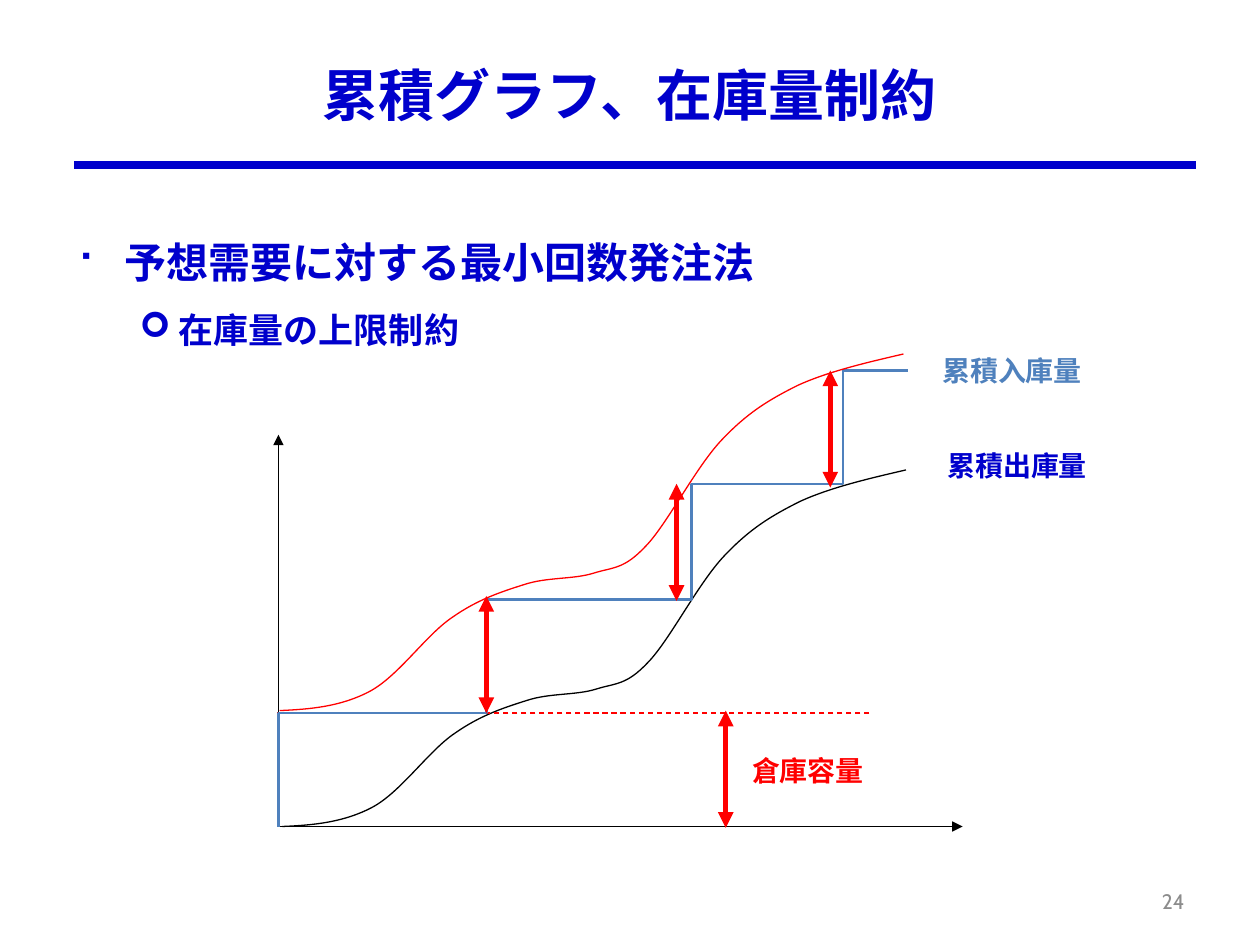
from dataclasses import dataclass

from lxml import etree
from pptx import Presentation
from pptx.dml.color import RGBColor
from pptx.enum.dml import MSO_LINE
from pptx.enum.shapes import MSO_CONNECTOR
from pptx.enum.text import MSO_ANCHOR, PP_ALIGN
from pptx.oxml.ns import qn
from pptx.util import Inches, Pt

STRAIGHT = MSO_CONNECTOR.STRAIGHT
DASH = MSO_LINE.DASH
TOP, MIDDLE = MSO_ANCHOR.TOP, MSO_ANCHOR.MIDDLE
LEFT, CENTER, RIGHT = PP_ALIGN.LEFT, PP_ALIGN.CENTER, PP_ALIGN.RIGHT

NAVY, BLUE, RED, BLACK, GRAY = "0000CC", "4F81BD", "FF0000", "000000", "8C8C8C"
TITLE_FONT, LABEL_FONT, CAPACITY_FONT = "Cabin", "Noto Sans CJK JP", "Arial"
BULLET_FONT = "Wingdings"

# Chart frame in inches: origin, axis ends and the corners of the orders
X0, Y0 = 2.21, 6.56
X_END, Y_END = 7.64, 3.45
ARROW = 0.93
LEVELS = [5.66, 4.76, 3.84, 2.94]
ORDER_X = [X0, 3.86, 5.49, 6.69, 7.21]
CAPACITY_ARROWS = [(5.76, 5.64), (3.86, 4.73), (5.37, 3.84), (6.59, 2.94)]

# Start point, then two controls and an end for each Bézier segment
DEMAND = [
    (2.24, 6.56),
    (2.48, 6.55), (2.72, 6.53), (2.95, 6.41),
    (3.18, 6.29), (3.4, 5.96), (3.61, 5.82),
    (3.81, 5.68), (3.99, 5.62), (4.18, 5.56),
    (4.36, 5.5), (4.57, 5.52), (4.73, 5.47),
    (4.89, 5.42), (4.97, 5.44), (5.14, 5.26),
    (5.31, 5.09), (5.54, 4.63), (5.75, 4.41),
    (5.95, 4.2), (6.11, 4.1), (6.35, 3.98),
    (6.59, 3.87), (6.89, 3.8), (7.19, 3.73),
]
LIMIT = [(x - 0.02, y - 0.92) for x, y in DEMAND]


@dataclass
class Label:
    text: str
    box: tuple
    size: int
    font: str
    color: str
    bold: bool = True
    align: PP_ALIGN = LEFT
    anchor: MSO_ANCHOR = TOP
    wrap: bool = True


@dataclass
class Bullet:
    mark: str
    text: str
    size: int
    margin: float
    hanging: float


TITLE = Label("累積グラフ、在庫量制約", (0.5, 0.04, 9, 1.42), 32, TITLE_FONT, NAVY,
              align=CENTER, anchor=MIDDLE)
LABELS = [
    Label("24", (7.17, 6.95, 2.33, 0.4), 12, TITLE_FONT, GRAY, False, RIGHT, MIDDLE),
    Label("累積入庫量", (7.38, 2.76, 1.32, 0.37), 16, LABEL_FONT, BLUE, wrap=False),
    Label("累積出庫量", (7.42, 3.51, 1.32, 0.37), 16, LABEL_FONT, NAVY, wrap=False),
    Label("倉庫容量", (5.87, 5.93, 1.21, 0.37), 16, CAPACITY_FONT, RED),
]
BULLETS = [
    Bullet("■", "予想需要に対する最小回数発注法", 24, 0.38, 0.38),
    Bullet("➢", "在庫量の上限制約", 20, 0.81, 0.31),
]


def rgb(color: str) -> RGBColor:
    return RGBColor.from_string(color)


def add_run(p, text: str, size: int, font: str, color: str, bold: bool = True) -> None:
    r = p.add_run()
    r.text = text
    for name, value in {"size": Pt(size), "name": font, "bold": bold}.items():
        setattr(r.font, name, value)
    r.font.color.rgb = rgb(color)
    etree.SubElement(r._r.get_or_add_rPr(), qn("a:ea"), typeface=font)


def fill_label(sp, label: Label) -> None:
    """Place a shape and write the label's text in it."""
    for name, value in zip(("left", "top", "width", "height"), label.box):
        setattr(sp, name, Inches(value))
    tf = sp.text_frame
    tf.word_wrap, tf.vertical_anchor = label.wrap, label.anchor
    p = tf.paragraphs[0]
    p.alignment = label.align
    add_run(p, label.text, label.size, label.font, label.color, label.bold)


def add_bullets(s, box: tuple, bullets: list) -> None:
    tf = s.shapes.add_textbox(*map(Inches, box)).text_frame
    tf.word_wrap = True
    for i, bullet in enumerate(bullets):
        p = tf.add_paragraph() if i else tf.paragraphs[0]
        p.level, p.line_spacing = i, 1.5
        pPr = p._p.get_or_add_pPr()
        pPr.set("marL", str(Inches(bullet.margin)))
        pPr.set("indent", str(-Inches(bullet.hanging)))
        etree.SubElement(pPr, qn("a:buFont"), typeface=BULLET_FONT, charset="2")
        etree.SubElement(pPr, qn("a:buChar"), char=bullet.mark)
        add_run(p, bullet.text, bullet.size, TITLE_FONT, NAVY)


def add_line(s, start: tuple, end: tuple, color: str, width: float,
             arrows: tuple = (), dash=None) -> None:
    """Arrows names the ends that carry a triangle: headEnd, tailEnd."""
    line = s.shapes.add_connector(STRAIGHT, *map(Inches, (*start, *end)))
    line.line.color.rgb, line.line.width = rgb(color), Pt(width)
    if dash:
        line.line.dash_style = dash
    for arrow in arrows:
        etree.SubElement(line.line._get_or_add_ln(), qn("a:" + arrow), type="triangle")
    etree.SubElement(line._element.spPr, qn("a:effectLst"))


def add_path(s, points: list, color: str, width: float):
    start, *rest = [(Inches(x), Inches(y)) for x, y in points]
    builder = s.shapes.build_freeform(*start)
    builder.add_line_segments(rest, close=False)
    sp = builder.convert_to_shape()
    sp.fill.background()
    sp.line.color.rgb, sp.line.width = rgb(color), Pt(width)
    sp.shadow.inherit = False
    return sp


def add_curve(s, knots: list, color: str, width: float) -> None:
    """Draw the knots as a path, then join each three segments into one Bézier."""
    outline = next(add_path(s, knots, color, width)._element.iter(qn("a:path")))
    segments = outline.findall(qn("a:lnTo"))
    for i in range(0, len(segments), 3):
        curve = etree.SubElement(outline, qn("a:cubicBezTo"))
        for segment in segments[i:i + 3]:
            curve.append(segment[0])
            outline.remove(segment)


def order_steps() -> list:
    """Corners of the staircase of cumulative receipts."""
    points = [(X0, Y0)]
    for left, right, level in zip(ORDER_X, ORDER_X[1:], LEVELS):
        points += [(left, level), (right, level)]
    return points


def main() -> None:
    prs = Presentation()
    prs.slide_width, prs.slide_height = Inches(10), Inches(7.5)
    s = prs.slides.add_slide(prs.slide_layouts[5])

    add_line(s, (0.59, 1.31), (9.49, 1.31), NAVY, 4.5)
    fill_label(s.shapes.title, TITLE)
    add_bullets(s, (0.51, 1.63, 9.22, 1.59), BULLETS)
    for label in LABELS:
        fill_label(s.shapes.add_textbox(0, 0, 0, 0), label)

    for end in ((X_END, Y0), (X0, Y_END)):
        add_line(s, (X0, Y0), end, BLACK, 0.75, ("tailEnd",))
    add_curve(s, DEMAND, BLACK, 0.75)
    add_line(s, (6.9, LEVELS[0]), (2.19, LEVELS[0]), RED, 0.75, dash=DASH)
    add_path(s, order_steps(), BLUE, 1.5)
    for x, top in CAPACITY_ARROWS:
        add_line(s, (x, top), (x, top + ARROW), RED, 3, ("headEnd", "tailEnd"))
    add_curve(s, LIMIT, RED, 0.75)

    prs.save("out.pptx")


if __name__ == "__main__":
    main()
